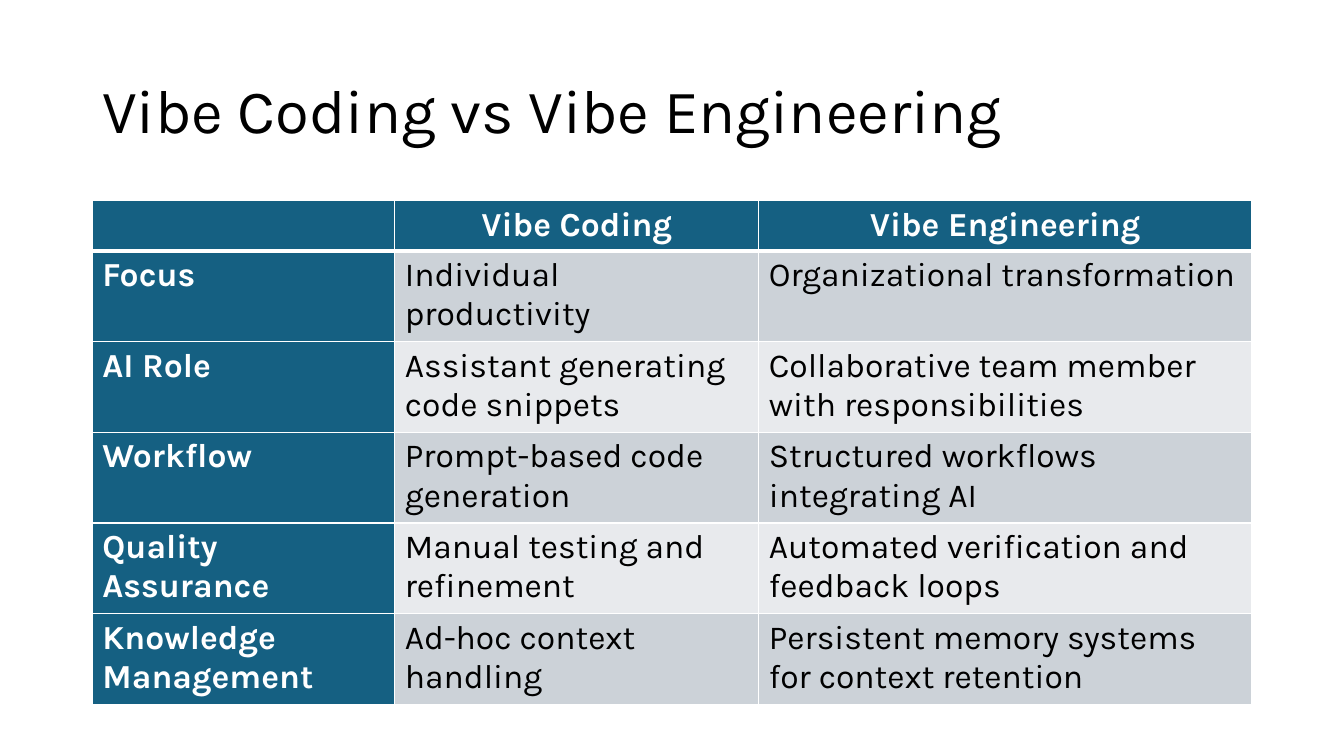
"""Build a slide with a table comparing vibe coding and vibe engineering."""
from dataclasses import dataclass

from lxml.etree import SubElement
from pptx import Presentation
from pptx.dml.color import RGBColor
from pptx.enum.text import MSO_ANCHOR, PP_ALIGN
from pptx.oxml.ns import qn
from pptx.util import Pt

TITLE = "Vibe Coding vs Vibe Engineering"
ROWS = [
    ("", "Vibe Coding", "Vibe Engineering"),
    ("Focus", "Individual productivity", "Organizational transformation"),
    ("AI Role", "Assistant generating code snippets",
     "Collaborative team member with responsibilities"),
    ("Workflow", "Prompt-based code generation", "Structured workflows integrating AI"),
    ("Quality Assurance", "Manual testing and refinement",
     "Automated verification and feedback loops"),
    ("Knowledge Management", "Ad-hoc context handling",
     "Persistent memory systems for context retention"),
]


@dataclass(frozen=True)
class Theme:
    """Fonts, type sizes and colours."""
    font: str = "Karla"
    title_size: int = 44
    table_size: int = 24
    text: str = "000000"
    light: str = "FFFFFF"
    accent: str = "156082"
    bands: tuple = ("CCD2D8", "E8EAED")
    thin: int = 1
    thick: int = 3


THEME = Theme()
PAGE_WIDTH, PAGE_HEIGHT = 960, 540
MARGIN = 66
CONTENT_WIDTH = PAGE_WIDTH - 2 * MARGIN
TITLE_TOP, TITLE_HEIGHT = 28.75, 104.4
TABLE_TOP = 143
COLUMN_WIDTHS = (216, 260, 352)
HEADER_HEIGHT, BODY_HEIGHT = 34, 63


def style_text(para, size, color, bold=False):
    for span in para.runs:
        span.font.name = THEME.font
        span.font.size = Pt(size)
        span.font.bold = bold
        span.font.color.rgb = RGBColor.from_string(color)


def add_title(page):
    box = page.shapes.add_textbox(
        Pt(MARGIN), Pt(TITLE_TOP), Pt(CONTENT_WIDTH), Pt(TITLE_HEIGHT))
    frame = box.text_frame
    frame.word_wrap = True
    frame.vertical_anchor = MSO_ANCHOR.MIDDLE
    frame.text = TITLE
    para = frame.paragraphs[0]
    para.line_spacing = 0.9
    style_text(para, THEME.title_size, THEME.text)


def set_borders(cell, row):
    widths = {"lnL": THEME.thin, "lnR": THEME.thin,
              "lnT": THEME.thick if row == 1 else THEME.thin,
              "lnB": THEME.thick if row == 0 else THEME.thin}
    properties = cell._tc.get_or_add_tcPr()
    for side, width in widths.items():
        line = SubElement(properties, qn(f"a:{side}"), w=str(Pt(width)))
        fill = SubElement(line, qn("a:solidFill"))
        SubElement(fill, qn("a:srgbClr"), val=THEME.light)


def fill_cell(cell, text, row, column):
    is_heading = row == 0 or column == 0
    set_borders(cell, row)
    cell.fill.solid()
    color = THEME.accent if is_heading else THEME.bands[(row - 1) % 2]
    cell.fill.fore_color.rgb = RGBColor.from_string(color)
    cell.text_frame.text = text
    para = cell.text_frame.paragraphs[0]
    para.alignment = PP_ALIGN.CENTER if row == 0 else PP_ALIGN.LEFT
    style_text(para, THEME.table_size,
               THEME.light if is_heading else THEME.text, is_heading)


def add_comparison(page):
    heights = [HEADER_HEIGHT] + [BODY_HEIGHT] * (len(ROWS) - 1)
    table = page.shapes.add_table(
        len(ROWS), len(COLUMN_WIDTHS), Pt(MARGIN), Pt(TABLE_TOP),
        Pt(CONTENT_WIDTH), Pt(sum(heights))).table
    table.first_col = True
    for column, width in zip(table.columns, COLUMN_WIDTHS):
        column.width = Pt(width)
    for row, (texts, height) in enumerate(zip(ROWS, heights)):
        table.rows[row].height = Pt(height)
        for column, text in enumerate(texts):
            fill_cell(table.cell(row, column), text, row, column)


def main():
    deck = Presentation()
    deck.slide_width, deck.slide_height = Pt(PAGE_WIDTH), Pt(PAGE_HEIGHT)
    page = deck.slides.add_slide(deck.slide_layouts[6])
    add_title(page)
    add_comparison(page)
    deck.save("out.pptx")


if __name__ == "__main__":
    main()
